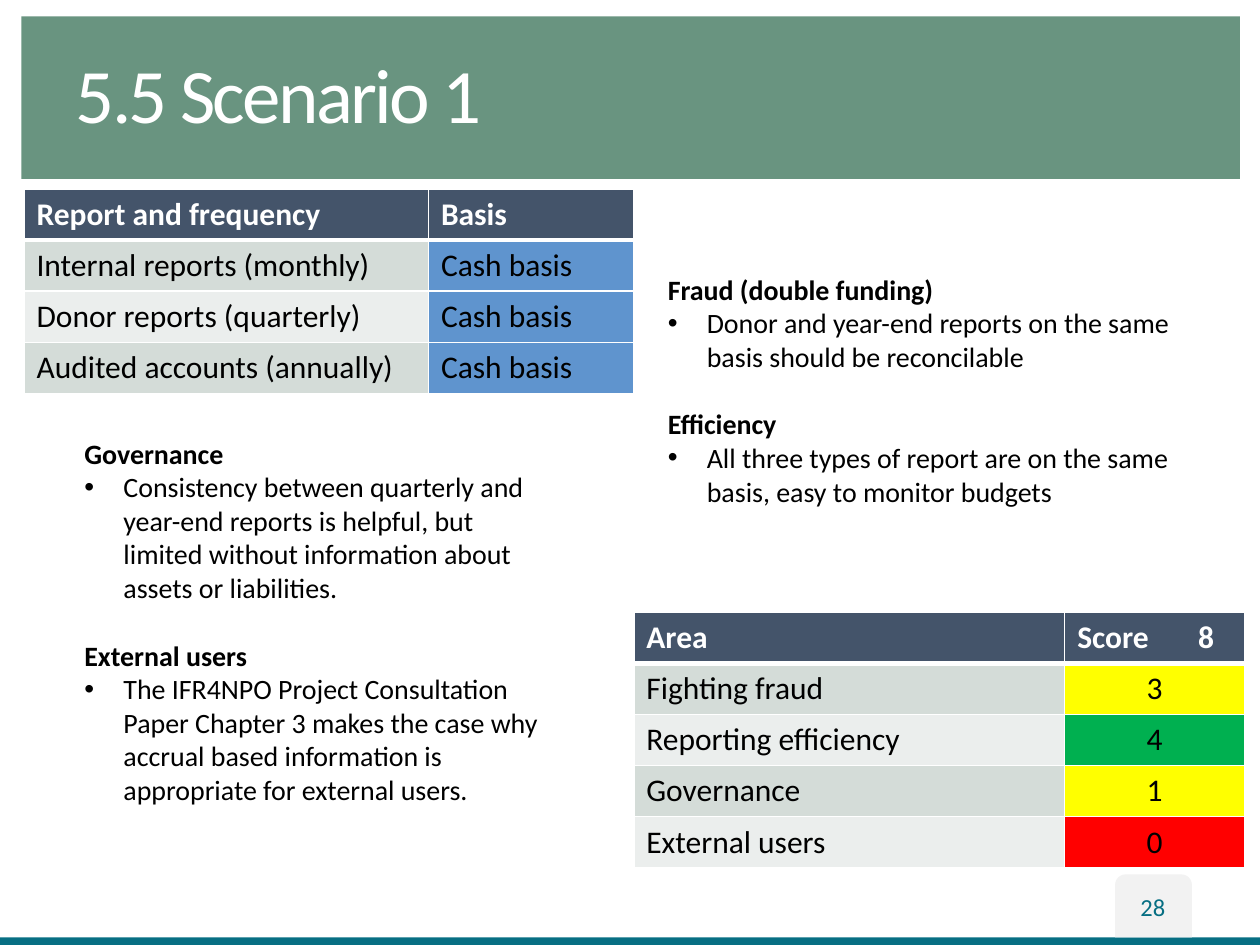
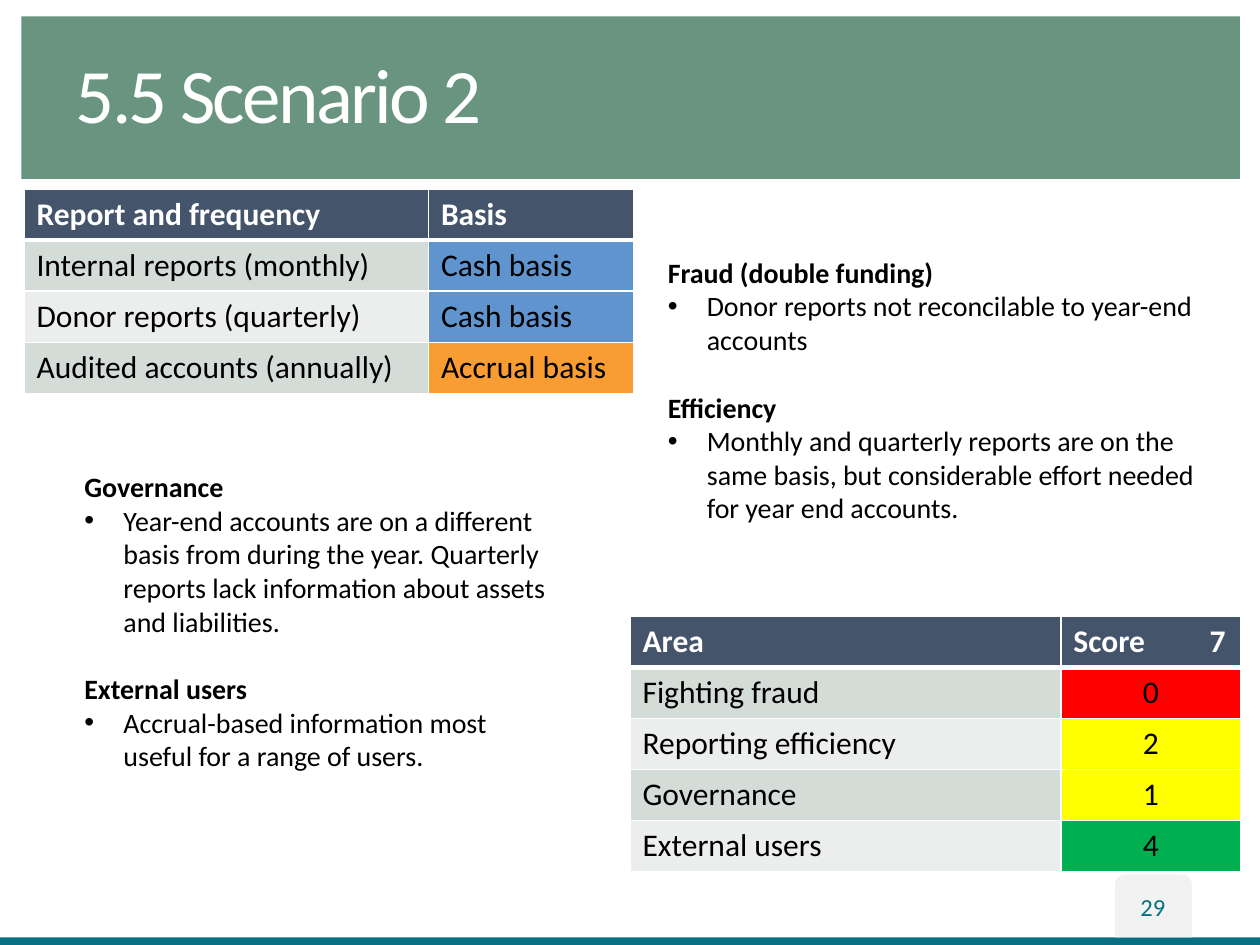
from dataclasses import dataclass

from lxml import etree
from pptx import Presentation
from pptx.dml.color import RGBColor
from pptx.enum.shapes import MSO_SHAPE
from pptx.enum.text import MSO_ANCHOR, MSO_AUTO_SIZE, PP_ALIGN
from pptx.oxml.ns import qn
from pptx.util import Inches, Pt

RECT, TAB_SHAPE = MSO_SHAPE.RECTANGLE, MSO_SHAPE.ROUND_2_SAME_RECTANGLE
LEFT, CENTER = PP_ALIGN.LEFT, PP_ALIGN.CENTER
MIDDLE, NO_FIT = MSO_ANCHOR.MIDDLE, MSO_AUTO_SIZE.NONE

WHITE = RGBColor(0xFF, 0xFF, 0xFF)
BLACK = RGBColor(0x00, 0x00, 0x00)
SAGE = RGBColor(0x69, 0x94, 0x80)
TEAL = RGBColor(0x07, 0x6F, 0x83)
PALE_GREY = RGBColor(0xF2, 0xF2, 0xF2)
SLATE = RGBColor(0x44, 0x54, 0x6A)
STRIPES = (RGBColor(0xD4, 0xDC, 0xD8), RGBColor(0xEB, 0xEE, 0xED))
RED = RGBColor(0xFF, 0x00, 0x00)
YELLOW = RGBColor(0xFF, 0xFF, 0x00)
GREEN = RGBColor(0x00, 0xB0, 0x50)
BASIS_COLORS = {
    "Cash basis": RGBColor(0x5F, 0x94, 0xCE),
    "Accrual basis": RGBColor(0xF9, 0x9D, 0x33),
}

FONT = "Calibri"
GRID = Inches(0.1)
COLS, ROWS = 100, 75
ROW_HEIGHT = 4.05
FIRST_PAGE = 28
LAYOUT_INDEX = 3
REPORTS = ("Internal reports (monthly)", "Donor reports (quarterly)",
           "Audited accounts (annually)")
AREAS = ("Fighting fraud", "Reporting efficiency", "Governance", "External users")


def units(n: float) -> int:
    return round(n * GRID)


@dataclass(frozen=True)
class Box:
    x: float
    y: float
    w: float
    h: float

    def emu(self) -> tuple[int, ...]:
        return tuple(units(n) for n in (self.x, self.y, self.w, self.h))


@dataclass(frozen=True)
class Band:
    shape: int
    box: Box
    color: RGBColor


@dataclass(frozen=True)
class Cell:
    text: str
    fill: RGBColor
    align: int = LEFT


@dataclass(frozen=True)
class Scenario:
    title: str
    bases: tuple[str, ...]
    scores: tuple[int, ...]
    score_x: float
    score_y: float
    total_tab: float
    fraud: str
    efficiency: str
    governance: str
    users: str


BANDS = (
    Band(RECT, Box(1.7, 1.3, 96.7, 12.9), SAGE),
    Band(RECT, Box(0, 74.4, COLS, 0.7), TEAL),
    Band(TAB_SHAPE, Box(88.5, 69.4, 6.1, 5), PALE_GREY),
)
TITLE_BOX = Box(5, 1.3, 89.6, 13)
PAGE_BOX = Box(88.4, 69.5, 6.2, 4.9)
RIGHT_BOX = Box(50.3, 13.6, 47.8, 34.7)
LEFT_BOX = Box(4.2, 34.2, 42.4, 30.2)

SCENARIOS = (
    Scenario(
        "5.5 Scenario 1", ("Cash basis",) * 3, (3, 4, 1, 0), 50.3, 48.6, 9.6,
        "Donor and year-end reports on the same basis should be reconcilable",
        "All three types of report are on the same basis, easy to monitor budgets",
        "Consistency between quarterly and year-end reports is helpful, but "
        "limited without information about assets or liabilities.",
        "The IFR4NPO Project Consultation Paper Chapter 3 makes the case why "
        "accrual based information is appropriate for external users.",
    ),
    Scenario(
        "5.5 Scenario 2", ("Cash basis", "Cash basis", "Accrual basis"),
        (0, 2, 1, 4), 50, 48.9, 10.8,
        "Donor reports not reconcilable to year-end accounts",
        "Monthly and quarterly reports are on the same basis, but considerable "
        "effort needed for year end accounts.",
        "Year-end accounts are on a different basis from during the year. "
        "Quarterly reports lack information about assets and liabilities.",
        "Accrual-based information most useful for a range of users.",
    ),
)


def style(p, size: float, color: RGBColor, bold: bool = False) -> None:
    for r in p.runs:
        r.font.name = FONT
        r.font.size = Pt(size)
        r.font.color.rgb = color
        r.font.bold = bold


def place(sp, box: Box) -> None:
    sp.left, sp.top, sp.width, sp.height = box.emu()


def move_bands_to_layout(s, layout) -> None:
    for ph in list(layout.placeholders)[3:]:
        ph.element.getparent().remove(ph.element)
    for i, band in enumerate(BANDS):
        sp = s.shapes.add_shape(band.shape, *band.box.emu())
        sp.shadow.inherit = False
        sp.fill.solid()
        sp.fill.fore_color.rgb = band.color
        sp.line.fill.background()
        layout.shapes.element.insert(2 + i, sp.element)


def add_title(s, text: str) -> None:
    sp = s.shapes.title
    place(sp, TITLE_BOX)
    tf = sp.text_frame
    tf.text = text
    tf.auto_size = NO_FIT
    tf.vertical_anchor = MIDDLE
    p = tf.paragraphs[0]
    p.alignment = LEFT
    p.line_spacing = 0.9
    style(p, 44, WHITE)
    for props in sp.element.iter(qn("a:rPr")):
        props.set("spc", "-150")


def add_page_number(s, number: int) -> None:
    tf = s.shapes.add_textbox(*PAGE_BOX.emu()).text_frame
    tf.word_wrap = True
    tf.vertical_anchor = MIDDLE
    tf.text = str(number)
    p = tf.paragraphs[0]
    p.alignment = CENTER
    style(p, 14, TEAL)


def set_bullet(p, bulleted: bool) -> None:
    props = p._p.get_or_add_pPr()
    indent = Inches(0.31) if bulleted else 0
    props.set("marL", str(indent))
    props.set("indent", str(-indent))
    if bulleted:
        etree.SubElement(props, qn("a:buFont")).set("typeface", "Arial")
        etree.SubElement(props, qn("a:buChar")).set("char", "•")
    else:
        etree.SubElement(props, qn("a:buNone"))


def add_comments(sp, box: Box, inset: float, comments: dict[str, str]) -> None:
    place(sp, box)
    tf = sp.text_frame
    tf.auto_size = NO_FIT
    tf.word_wrap = True
    tf.vertical_anchor = MIDDLE
    tf.margin_left = tf.margin_right = units(inset)
    tf.text = "\n".join(line for pair in comments.items() for line in pair)
    for i, p in enumerate(tf.paragraphs):
        is_heading = i % 2 == 0
        set_bullet(p, not is_heading)
        p.alignment = LEFT
        p.space_before = Pt(19.5 if is_heading and i else 0)
        style(p, 16, BLACK, is_heading)


def set_borders(cell, top: float, bottom: float) -> None:
    props = cell._tc.get_or_add_tcPr()
    for side, width in (("L", 1), ("R", 1), ("T", top), ("B", bottom)):
        line = etree.SubElement(props, qn(f"a:ln{side}"), w=str(Pt(width)))
        fill = etree.SubElement(line, qn("a:solidFill"))
        etree.SubElement(fill, qn("a:srgbClr")).set("val", str(WHITE))


def add_grid_table(s, x: float, y: float, widths: tuple[float, ...],
                   rows: list[tuple[Cell, ...]]):
    box = Box(x, y, sum(widths), ROW_HEIGHT * len(rows))
    table = s.shapes.add_table(len(rows), len(widths), *box.emu()).table
    for column, width in zip(table.columns, widths):
        column.width = units(width)
    for i, row in enumerate(rows):
        table.rows[i].height = units(ROW_HEIGHT)
        for j, item in enumerate(row):
            cell = table.cell(i, j)
            set_borders(cell, 3 if i == 1 else 1, 3 if i == 0 else 1)
            cell.fill.solid()
            cell.fill.fore_color.rgb = item.fill
            cell.text = item.text
            p = cell.text_frame.paragraphs[0]
            p.alignment = item.align
            style(p, 18, BLACK if i else WHITE, i == 0)
    return table


def score_color(score: int) -> RGBColor:
    return {0: RED, 4: GREEN}.get(score, YELLOW)


def add_reports_table(s, sc: Scenario) -> None:
    rows = [(Cell("Report and frequency", SLATE), Cell("Basis", SLATE))]
    for i, (report, basis) in enumerate(zip(REPORTS, sc.bases)):
        rows.append((Cell(report, STRIPES[i % 2]), Cell(basis, BASIS_COLORS[basis])))
    add_grid_table(s, 1.9, 15, (32.1, 16.3), rows)


def add_scores_table(s, sc: Scenario) -> None:
    rows = [(Cell("Area", SLATE), Cell(f"Score\t{sum(sc.scores)}", SLATE))]
    for i, (area, score) in enumerate(zip(AREAS, sc.scores)):
        rows.append((Cell(area, STRIPES[i % 2]),
                     Cell(str(score), score_color(score), CENTER)))
    table = add_grid_table(s, sc.score_x, sc.score_y, (34.2, 14.3), rows)
    p = table.cell(0, 1).text_frame.paragraphs[0]
    tabs = etree.SubElement(p._p.get_or_add_pPr(), qn("a:tabLst"))
    etree.SubElement(tabs, qn("a:tab"), pos=str(units(sc.total_tab)), algn="l")


def main() -> None:
    prs = Presentation()
    prs.slide_width, prs.slide_height = COLS * GRID, ROWS * GRID
    layout = prs.slide_layouts[LAYOUT_INDEX]
    for number, sc in enumerate(SCENARIOS, FIRST_PAGE):
        s = prs.slides.add_slide(layout)
        if number == FIRST_PAGE:
            move_bands_to_layout(s, layout)
        add_title(s, sc.title)
        add_comments(s.placeholders[1], RIGHT_BOX, 2.7,
                     {"Fraud (double funding)": sc.fraud, "Efficiency": sc.efficiency})
        add_comments(s.placeholders[2], LEFT_BOX, 2.5,
                     {"Governance": sc.governance, "External users": sc.users})
        add_reports_table(s, sc)
        add_scores_table(s, sc)
        add_page_number(s, number)
    prs.save("out.pptx")


if __name__ == "__main__":
    main()
